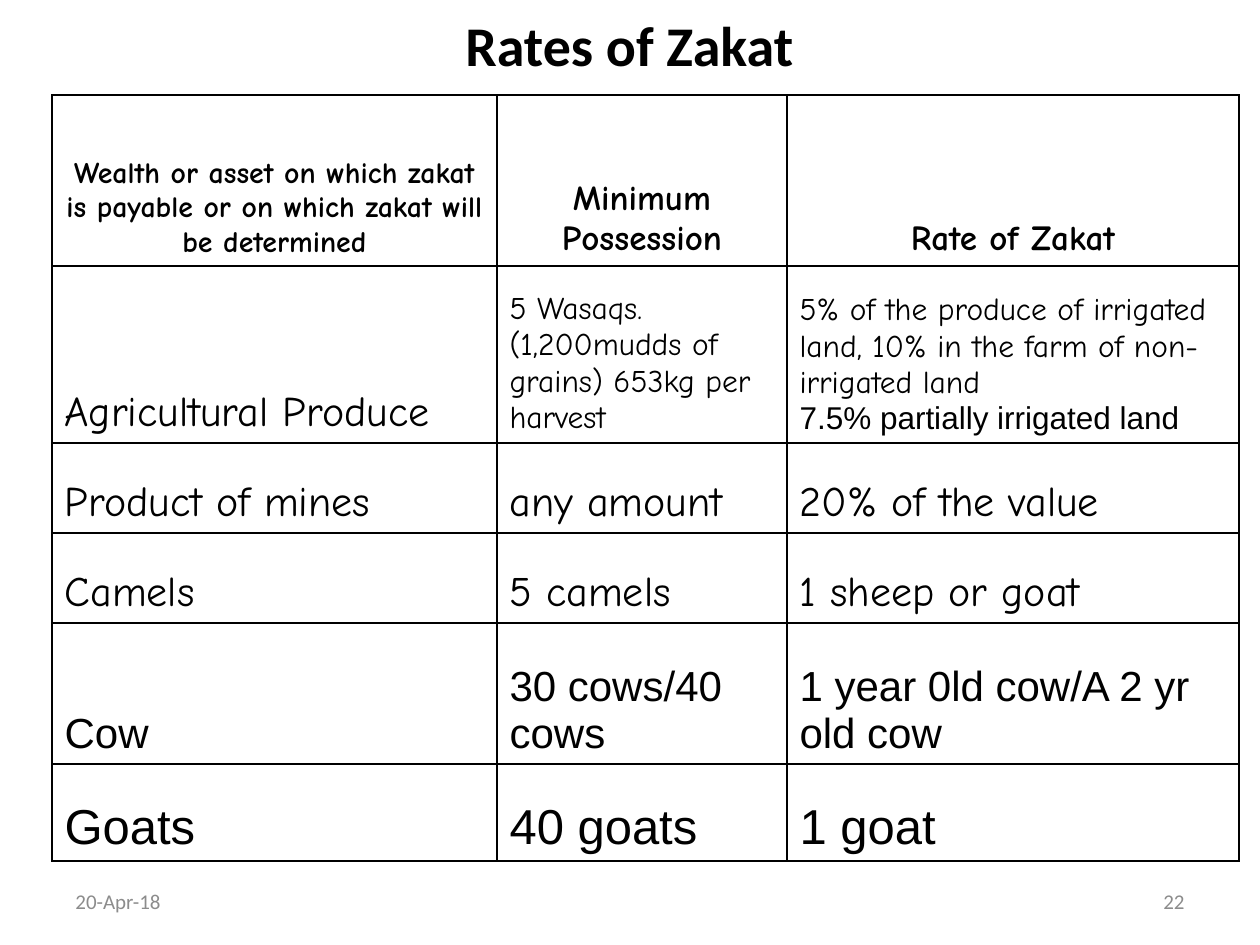
"""Build the Rates of Zakat slide with its table of assets, minimums and rates."""
from lxml import etree
from pptx import Presentation
from pptx.dml.color import RGBColor
from pptx.enum.text import MSO_ANCHOR, PP_ALIGN
from pptx.oxml.ns import qn
from pptx.util import Emu, Pt

LEFT, CENTER, RIGHT = PP_ALIGN.LEFT, PP_ALIGN.CENTER, PP_ALIGN.RIGHT
MIDDLE, BOTTOM = MSO_ANCHOR.MIDDLE, MSO_ANCHOR.BOTTOM
BLACK = RGBColor(0, 0, 0)
GRAY = RGBColor(0x8C, 0x8C, 0x8C)
COMIC, ARIAL, CALIBRI = "Comic Neue", "Arial", "Calibri"


def px(n):
    return Emu(round(n * 914400 / 126))


def add_text(p, text, size=24, font=COMIC, color=BLACK, bold=False, align=LEFT):
    p.alignment = align
    r = p.add_run()
    r.text = text
    r.font.size = Pt(size)
    r.font.name = font
    r.font.bold = bold
    r.font.color.rgb = color


prs = Presentation()
prs.slide_width, prs.slide_height = px(1260), px(945)
s = prs.slides.add_slide(prs.slide_layouts[5])

title = s.shapes.title
title.left, title.top, title.width, title.height = px(73), px(16), px(1113), px(57)
title.text_frame.vertical_anchor = MIDDLE
add_text(title.text_frame.paragraphs[0], "Rates of Zakat", size=32, font=CALIBRI,
         bold=True, align=CENTER)

COLS = [445, 290, 452]
ROWS = [
    (171, [[("Wealth or asset on which zakat is payable or on which zakat will be determined", 17, COMIC)],
           [("Minimum Possession", 20, COMIC)],
           [("Rate of Zakat", 20, COMIC)]]),
    (177, [[("Agricultural Produce", 24, COMIC)],
           [("5 Wasaqs. (1,200mudds of grains) 653kg per harvest", 18, COMIC)],
           [("5% of the produce of irrigated land, 10% in the farm of non-irrigated land", 18, COMIC),
            ("7.5% partially irrigated land", 18, ARIAL)]]),
    (90, [[(t, 24, COMIC)] for t in ("Product of mines", "any amount", "20% of the value")]),
    (90, [[(t, 24, COMIC)] for t in ("Camels", "5 camels", "1 sheep or goat")]),
    (141, [[(t, 24, ARIAL)] for t in ("Cow", "30 cows/40 cows", "1 year 0ld cow/A 2 yr old cow")]),
    (97, [[(t, 28, ARIAL)] for t in ("Goats", "40 goats", "1 goat")]),
]
height = sum(h for h, _ in ROWS)
table = s.shapes.add_table(len(ROWS), len(COLS), px(52), px(95), px(sum(COLS)), px(height)).table
table.first_row = table.horz_banding = False
for col, width in zip(table.columns, COLS):
    col.width = px(width)
for i, (row_height, cells) in enumerate(ROWS):
    table.rows[i].height = px(row_height)
    for j, lines in enumerate(cells):
        cell = table.cell(i, j)
        cell.vertical_anchor = BOTTOM
        tf = cell.text_frame
        for k, (text, size, font) in enumerate(lines):
            p = tf.add_paragraph() if k else tf.paragraphs[0]
            add_text(p, text, size=size, font=font, bold=i == 0, align=LEFT if i else CENTER)
        tcPr = cell._tc.get_or_add_tcPr()
        for side in ("a:lnL", "a:lnR", "a:lnT", "a:lnB"):
            ln = etree.SubElement(tcPr, qn(side), w=str(Pt(1)))
            fill = etree.SubElement(ln, qn("a:solidFill"))
            etree.SubElement(fill, qn("a:srgbClr"), val=str(BLACK))
        cell.fill.background()

for x, text, align in ((63, "20-Apr-18", LEFT), (903, "22", RIGHT)):
    tf = s.shapes.add_textbox(px(x), px(876), px(294), px(50)).text_frame
    tf.word_wrap = True
    tf.vertical_anchor = MIDDLE
    add_text(tf.paragraphs[0], text, size=12, font=CALIBRI, color=GRAY, align=align)

prs.save("out.pptx")
